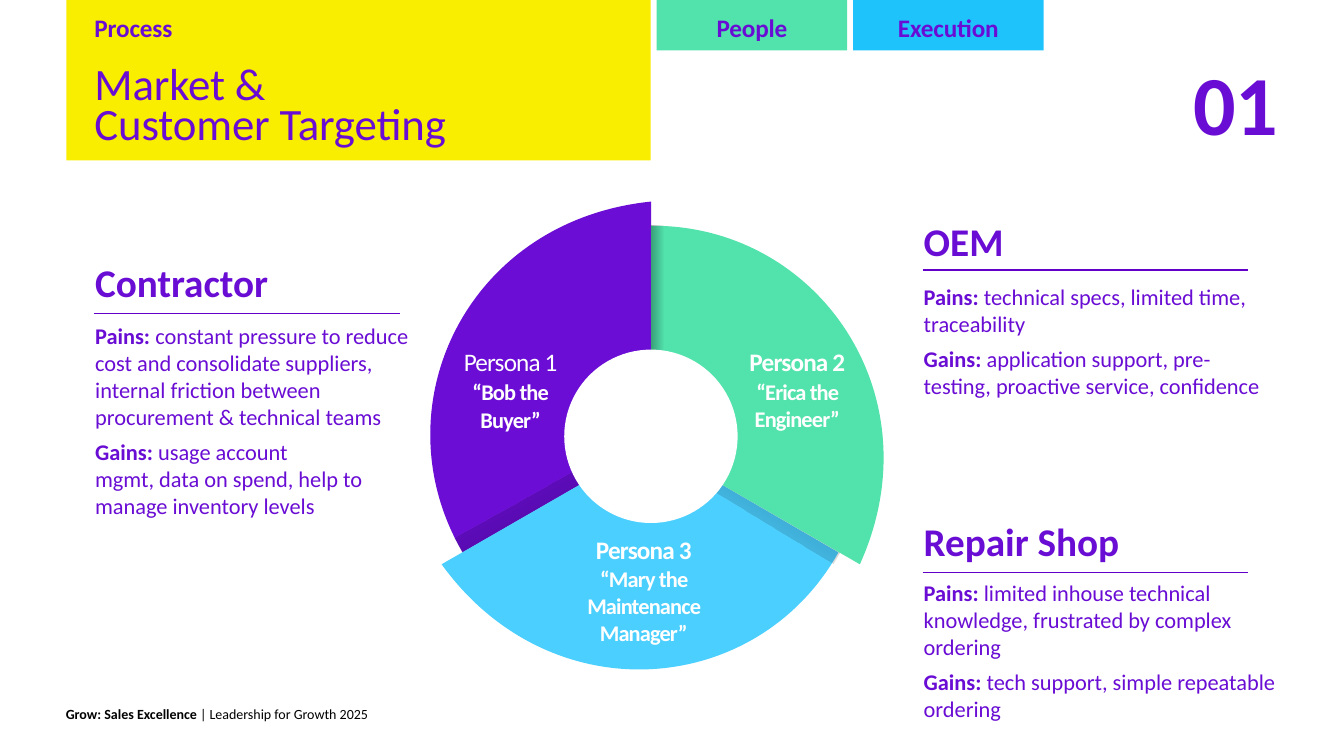
from lxml.etree import SubElement
from pptx import Presentation
from pptx.dml.color import RGBColor
from pptx.enum.shapes import MSO_CONNECTOR, MSO_SHAPE
from pptx.enum.text import MSO_ANCHOR as ANCHOR, MSO_AUTO_SIZE, PP_ALIGN as ALIGN
from pptx.oxml.ns import qn
from pptx.util import Cm, Pt

FONT = "Calibri"
PURPLE, YELLOW, GREEN, WHITE, BLACK = "6A0DD4", "F9EE00", "52E2AC", "FFFFFF", "000000"
RULE = "6200C9"

# All lengths are centimetres.
PROCESS = "Process"
TITLE = "Market &\nCustomer Targeting"
TITLE_BOX = (1.67, 0, 14.73, 4.04)
TABS = [("People", 16.55, GREEN), ("Execution", 21.5, "1FC3FC")]  # label, left, fill
FOOTER = [("Grow: Sales Excellence ", True), ("| Leadership for Growth 2025", False)]

# Each wedge runs from the hub along one cubic curve; its shade lies on top.
HUB = (16.41, 11.18)
HOLE = (14.22, 8.81, 4.37, 4.37)
WEDGES = [  # fill, box, curve control points, shade box, shade rotation
    ("6B0DD5", (10.85, 5.08, 5.56, 8.84),
     [(11.66, 13.92), (9.53, 10.29), (11.73, 5.56), (16.41, 5.08)],
     (11.33, 12.65, 3.56, 0.43), 150.9),
    ("4BCFFF", (11.13, 11.18, 10, 5.69),
     [(21.13, 13.92), (19.08, 17.58), (13.87, 18.01), (11.13, 14.22)],
     (17.78, 12.88, 3.56, 0.43), 31.2),
    (GREEN, (16.41, 5.69, 5.87, 8.53),
     [(16.41, 5.69), (20.6, 5.66), (23.6, 9.96), (21.67, 14.22)],
     (14.78, 7.32, 3.56, 0.3), 270),
]
PERSONAS = [  # label, label is bold, nickname lines, box
    ("Persona 1", False, ["“Bob the", "Buyer”"], (10.72, 8.7, 4.27, 2.24)),
    ("Persona 2", True, ["“Erica the Engineer”"], (18.1, 8.7, 3.96, 2.21)),
    ("Persona 3", True, ["“Mary the Maintenance Manager”"], (13.81, 13.43, 4.8, 2.9)),
]
SEGMENTS = [  # name, left, heading top, rule top, rule length, body top, body width, points
    ("Contractor", 2.37, 6.49, 7.9, 7.72, 8.1, 8, [
        ("Pains: ", "constant pressure to reduce cost and consolidate suppliers, "
                    "internal friction between procurement & technical teams"),
        ("Gains: ", "usage account\nmgmt, data on spend, help to manage inventory levels"),
    ]),
    ("OEM", 23.25, 5.44, 6.8, 8.2, 7.11, 8.53, [
        ("Pains: ", "technical specs, limited time, traceability"),
        ("Gains: ", "application support, pre-testing, proactive service, confidence"),
    ]),
    ("Repair Shop", 23.25, 13, 14.43, 8.2, 14.57, 9.02, [
        ("Pains: ", "limited inhouse technical knowledge, frustrated by complex ordering"),
        ("Gains: ", "tech support, simple repeatable ordering"),
    ]),
]


def rgb(value):
    return RGBColor.from_string(value)


def cm(lengths):
    return [Cm(length) for length in lengths]


def set_frame(frame, left=0.03, top=0.03, anchor=ANCHOR.TOP):
    frame.word_wrap = True
    frame.auto_size = MSO_AUTO_SIZE.NONE
    frame.vertical_anchor = anchor
    frame.margin_left, frame.margin_top = cm((left, top))
    frame.margin_right = frame.margin_bottom = 0
    return frame


def add_frame(box, **options):
    return set_frame(slide.shapes.add_textbox(*cm(box)).text_frame, **options)


def add_run(paragraph, text, size, color=PURPLE, bold=False, spacing=0):
    """Add text, with a line break at each newline; spacing is in points."""
    for i, line in enumerate(text.split("\n")):
        if i:
            paragraph.add_line_break()
        run = paragraph.add_run()
        run.text = line
        run.font.name, run.font.size, run.font.bold = FONT, Pt(size), bold
        run.font.color.rgb = rgb(color)
        if spacing:
            run._r.get_or_add_rPr().set("spc", str(round(spacing * 100)))


def next_paragraph(frame, first, before=0):
    if first:
        return frame.paragraphs[0]
    paragraph = frame.add_paragraph()
    paragraph.space_before = Pt(before)
    return paragraph


def paint(shape, color):
    shape.shadow.inherit = False
    shape.line.fill.background()
    shape.fill.solid()
    shape.fill.fore_color.rgb = rgb(color)
    return shape


def add_wedge(color, box, curve):
    """Outline hub and curve, then bend the last three sides into one cubic."""
    builder = slide.shapes.build_freeform(*cm(HUB))
    builder.add_line_segments([cm(point) for point in curve], close=True)
    wedge = paint(builder.convert_to_shape(), color)
    outline = next(wedge._element.iter(qn("a:path")))
    shift_x, shift_y = wedge.left - Cm(box[0]), wedge.top - Cm(box[1])
    for point in outline.iter(qn("a:pt")):
        point.set("x", str(int(point.get("x")) + shift_x))
        point.set("y", str(int(point.get("y")) + shift_y))
    wedge.left, wedge.top, wedge.width, wedge.height = cm(box)
    outline.set("w", str(wedge.width))
    outline.set("h", str(wedge.height))
    bend = SubElement(outline, qn("a:cubicBezTo"))
    for side in outline.findall(qn("a:lnTo"))[-3:]:
        bend.append(side[0])
        outline.remove(side)
    outline.append(outline.find(qn("a:close")))


def add_shade(box, rotation):
    """Add a black strip fading from 30 % opacity to nothing."""
    strip = paint(slide.shapes.add_shape(MSO_SHAPE.RECTANGLE, *cm(box)), BLACK)
    strip.rotation = rotation
    strip.fill.gradient()
    strip.fill.gradient_angle = 270
    for stop in strip.fill.gradient_stops:
        stop.color.rgb = rgb(BLACK)
    for color, opacity in zip(strip._element.spPr.iter(qn("a:srgbClr")), (30, 0)):
        SubElement(color, qn("a:alpha")).set("val", str(opacity * 1000))


def add_rule(left, top, length):
    rule = slide.shapes.add_connector(
        MSO_CONNECTOR.STRAIGHT, *cm((left, top, left + length, top)))
    rule.line.color.rgb = rgb(RULE)
    rule.line.width = Pt(1)
    SubElement(rule._element.spPr, qn("a:effectLst"))


deck = Presentation()
deck.slide_width, deck.slide_height = cm((33.87, 19.05))
slide = deck.slides.add_slide(deck.slide_layouts[5])

# Header
title = slide.shapes.title
title.left, title.top, title.width, title.height = cm(TITLE_BOX)
title.fill.solid()
title.fill.fore_color.rgb = rgb(YELLOW)
banner = set_frame(title.text_frame, left=0.64, top=0.3)
process = next_paragraph(banner, True)
process._p.get_or_add_pPr().set("marL", str(Cm(0.07)))
add_run(process, PROCESS, 18, bold=True, spacing=-0.1)
heading = next_paragraph(banner, False, before=18.5)
heading.line_spacing = 0.75
add_run(heading, TITLE, 32, spacing=-0.1)
for paragraph in (process, heading):
    paragraph.alignment = ALIGN.LEFT

for label, left, fill in TABS:
    tab = paint(slide.shapes.add_shape(MSO_SHAPE.RECTANGLE, *cm((left, 0, 4.8, 1.27))), fill)
    line = set_frame(tab.text_frame, left=0, top=0.3).paragraphs[0]
    line.alignment = ALIGN.CENTER
    add_run(line, label, 18, bold=True, spacing=-0.1)

number = add_frame((30.05, 1.27, 3, 2.59)).paragraphs[0]
add_run(number, "01", 60, bold=True, spacing=-0.6)

# Persona wheel
for fill, box, curve, shade, rotation in WEDGES:
    add_wedge(fill, box, curve)
    add_shade(shade, rotation)
paint(slide.shapes.add_shape(MSO_SHAPE.OVAL, *cm(HOLE)), WHITE)

for label, label_bold, nickname, box in PERSONAS:
    frame = add_frame(box)
    lines = [(label, 18, label_bold)] + [(text, 16, True) for text in nickname]
    for i, (text, size, bold) in enumerate(lines):
        line = next_paragraph(frame, i == 0, before=0.8)
        line.alignment = ALIGN.CENTER
        add_run(line, text, size, WHITE, bold, spacing=-0.6)

# Market segments
for name, left, name_top, rule_top, rule_length, body_top, width, points in SEGMENTS:
    add_run(add_frame((left, name_top, width, 1.22)).paragraphs[0], name, 28, bold=True)
    add_rule(left, rule_top, rule_length)
    body = add_frame((left, body_top, width, 3.66))
    for i, (topic, detail) in enumerate(points):
        point = next_paragraph(body, i == 0)
        point.space_after = Pt(6)
        add_run(point, topic, 16, bold=True)
        add_run(point, detail, 16)

footer = add_frame((1.66, 17.78, 10.85, 0.43), left=0, top=0, anchor=ANCHOR.MIDDLE).paragraphs[0]
for text, bold in FOOTER:
    add_run(footer, text, 10, BLACK, bold)

deck.save("out.pptx")
